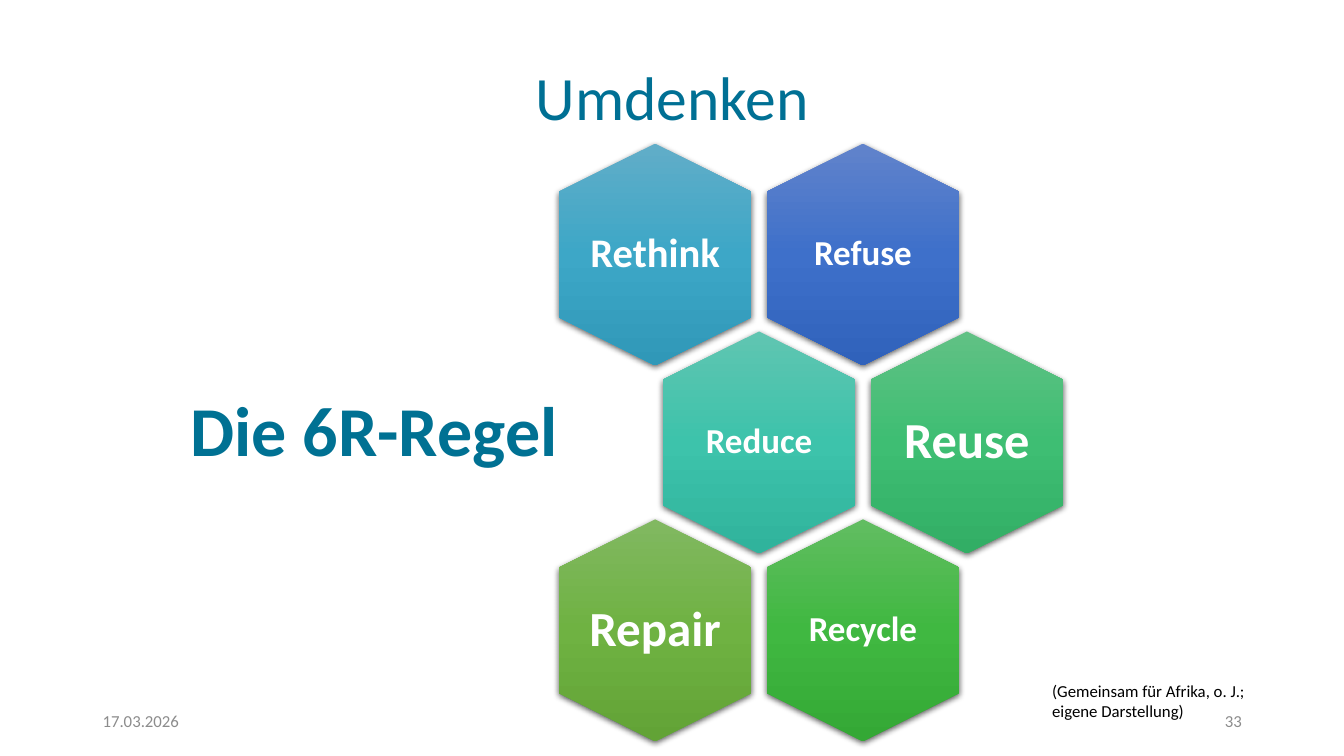
from dataclasses import dataclass

import lxml.etree
import pptx
import pptx.dml.color
import pptx.enum.shapes
import pptx.enum.text
import pptx.oxml
import pptx.oxml.ns
import pptx.util

Pt = pptx.util.Pt
ALIGN = pptx.enum.text.PP_ALIGN
ANCHOR = pptx.enum.text.MSO_ANCHOR
AUTO_SIZE = pptx.enum.text.MSO_AUTO_SIZE

FONT = "Calibri"
HEX_LENGTH, HEX_BREADTH = 158.4, 137.5
LABEL_WIDTH, LABEL_HEIGHT = 95, 108.7
FIRST_CENTER_X, FIRST_CENTER_Y = 468, 181.8
COLUMN_PITCH, ROW_PITCH = 148.4, 134.2


@dataclass(frozen=True)
class Style:
    size: float
    color: str
    bold: bool = False
    align: ALIGN = ALIGN.LEFT
    anchor: ANCHOR = ANCHOR.TOP
    line_spacing: float = 1.0
    insets: tuple[float, float] = (7.2, 3.6)
    grows: bool = False


@dataclass(frozen=True)
class Label:
    text: str
    left: float
    top: float
    width: float
    height: float
    style: Style


@dataclass(frozen=True)
class Rule:
    text: str
    row: int
    column: int
    size: float
    inset: float
    gradient: tuple[str, str, str]


FOOTER = Style(12, "8C8C8C", anchor=ANCHOR.MIDDLE)
FOOTER_RIGHT = Style(12, "8C8C8C", align=ALIGN.RIGHT, anchor=ANCHOR.MIDDLE)
TITLE = Label("Umdenken", 361.4, 36.7, 237.6, 70.6,
              Style(44, "007094", align=ALIGN.CENTER, anchor=ANCHOR.MIDDLE, line_spacing=0.9))
LABELS = [
    Label("17.03.2026", 66.2, 500.4, 216, 28.8, FOOTER),
    Label("33", 678.2, 500.4, 216, 28.8, FOOTER_RIGHT),
    Label("(Gemeinsam für Afrika, o. J.; eigene Darstellung)", 744.5, 482.4, 172.8, 36,
          Style(12, "000000", grows=True)),
    Label("Die 6R-Regel", 128.9, 272.2, 291.6, 67.7, Style(50, "007193", bold=True, grows=True)),
]
RULES = [
    Rule("Refuse", 0, 1, 25, 7.2, ("6183CB", "3E70CA", "3062BB")),
    Rule("Rethink", 0, 0, 29, 0, ("61ADC8", "3DA7C7", "3098B8")),
    Rule("Reduce", 1, 0, 25, 7.2, ("60C5B1", "3DC3AB", "30B39C")),
    Rule("Reuse", 1, 1, 36, 0, ("60C184", "3EBE73", "32AE65")),
    Rule("Recycle", 2, 1, 25, 7.2, ("61BD61", "40B841", "34A835")),
    Rule("Repair", 2, 0, 35, 0, ("81B861", "6FB242", "62A336")),
]


def rgb(color: str) -> pptx.dml.color.RGBColor:
    return pptx.dml.color.RGBColor.from_string(color)


def place(box, label: Label) -> None:
    """Position a box and write its single run of text."""
    style = label.style
    box.left, box.top = Pt(label.left), Pt(label.top)
    box.width, box.height = Pt(label.width), Pt(label.height)
    frame = box.text_frame
    frame.word_wrap = True
    frame.auto_size = AUTO_SIZE.SHAPE_TO_FIT_TEXT if style.grows else AUTO_SIZE.NONE
    frame.vertical_anchor = style.anchor
    frame.margin_left = frame.margin_right = Pt(style.insets[0])
    frame.margin_top = frame.margin_bottom = Pt(style.insets[1])
    para = frame.paragraphs[0]
    para.alignment = style.align
    para.line_spacing = style.line_spacing
    span = para.add_run()
    span.text = label.text
    span.font.name = FONT
    span.font.size = Pt(style.size)
    span.font.bold = style.bold
    span.font.color.rgb = rgb(style.color)


def add_label(page, label: Label) -> None:
    place(page.shapes.add_textbox(0, 0, 0, 0), label)


def fill_and_shade(shape, colors: tuple[str, str, str]) -> None:
    """Give a shape an upright gradient and a shadow that ignore its rotation."""
    shape.fill.gradient()
    properties = shape.fill._xPr
    gradient = properties.find(pptx.oxml.ns.qn("a:gradFill"))
    stops = "".join(f'<a:gs pos="{index * 50000}"><a:srgbClr val="{color}"/></a:gs>'
                    for index, color in enumerate(colors))
    namespace = pptx.oxml.ns.nsdecls("a")
    properties.replace(gradient, pptx.oxml.parse_xml(
        f'<a:gradFill {namespace} rotWithShape="0"><a:gsLst>{stops}</a:gsLst>'
        '<a:lin ang="5400000" scaled="0"/></a:gradFill>'))
    shape.line.fill.background()
    shape.shadow.inherit = False
    effects = properties.find(pptx.oxml.ns.qn("a:effectLst"))
    effects.append(pptx.oxml.parse_xml(
        f'<a:outerShdw {namespace} blurRad="{Pt(4.5)}" dist="{Pt(1.5)}" dir="5400000" '
        'algn="ctr" rotWithShape="0"><a:srgbClr val="000000"><a:alpha val="63000"/>'
        '</a:srgbClr></a:outerShdw>'))


def add_rule(page, rule: Rule) -> None:
    """Draw one honeycomb cell; odd rows shift by half a column."""
    center_x = FIRST_CENTER_X + (rule.column + rule.row % 2 / 2) * COLUMN_PITCH
    center_y = FIRST_CENTER_Y + rule.row * ROW_PITCH
    hexagon = page.shapes.add_shape(
        pptx.enum.shapes.MSO_SHAPE.HEXAGON,
        Pt(center_x - HEX_LENGTH / 2), Pt(center_y - HEX_BREADTH / 2),
        Pt(HEX_LENGTH), Pt(HEX_BREADTH))
    hexagon.rotation = 90
    hexagon.adjustments[0] = 0.25
    hexagon.adjustments[1] = 1.1547
    fill_and_shade(hexagon, rule.gradient)
    style = Style(rule.size, "FFFFFF", True, ALIGN.CENTER, ANCHOR.MIDDLE, 0.9,
                  (rule.inset, rule.inset))
    add_label(page, Label(rule.text, center_x - LABEL_WIDTH / 2, center_y - LABEL_HEIGHT / 2,
                          LABEL_WIDTH, LABEL_HEIGHT, style))


def main() -> None:
    deck = pptx.Presentation()
    deck.slide_width, deck.slide_height = Pt(960), Pt(540)
    page = deck.slides.add_slide(deck.slide_layouts[5])
    place(page.shapes.title, TITLE)
    for rule in RULES:
        add_rule(page, rule)
    for label in LABELS:
        add_label(page, label)
    deck.save("out.pptx")


if __name__ == "__main__":
    main()
